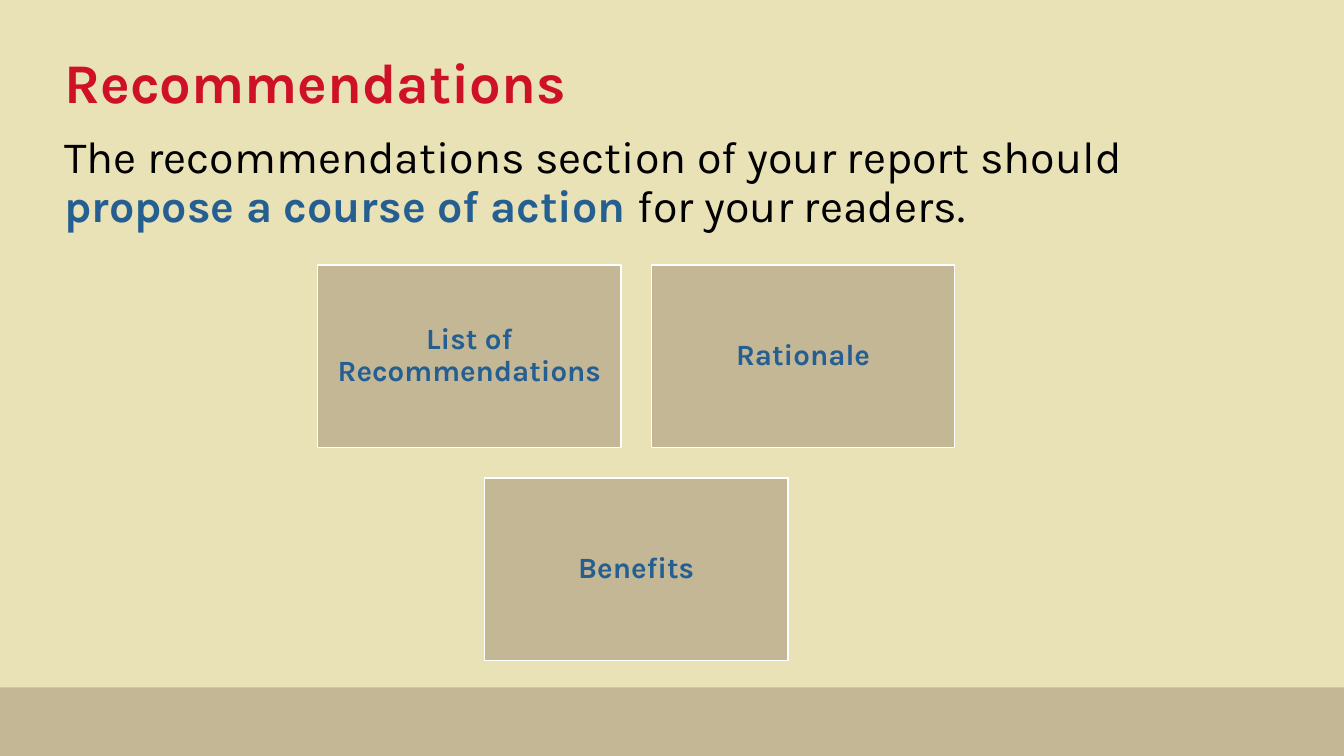
from pptx import Presentation
from pptx.dml.color import RGBColor
from pptx.enum.shapes import MSO_SHAPE
from pptx.enum.text import MSO_ANCHOR, PP_ALIGN
from pptx.util import Inches, Pt

COLORS = {"cream": "EAE2B7", "tan": "C4B796", "red": "CE1126",
          "blue": "255F91", "black": "000000", "white": "FFFFFF"}


class Deck:
    """Style, current slide and the grid that holds the cards."""
    font = "Karla"
    left, top = 3.15, 2.63
    card_w, card_h, gap = 3.01, 1.81, 0.3

    def __init__(self, prs):
        self.s = prs.slides.add_slide(prs.slide_layouts[6])
        fill = self.s.background.fill
        fill.solid()
        fill.fore_color.rgb = self.color("cream")

    def color(self, name):
        return RGBColor.from_string(COLORS[name])

    def style(self, r, size, color, bold):
        r.font.name, r.font.size, r.font.bold = self.font, Pt(size), bold
        r.font.color.rgb = self.color(color)

    def rect(self, x, y, w, h, line=None):
        sp = self.s.shapes.add_shape(
            MSO_SHAPE.RECTANGLE, Inches(x), Inches(y), Inches(w), Inches(h))
        sp.shadow.inherit = False
        sp.fill.solid()
        sp.fill.fore_color.rgb = self.color("tan")
        if line:
            sp.line.color.rgb = self.color(line)
            sp.line.width = Pt(1)
        else:
            sp.line.fill.background()
        return sp

    def text(self, x, y, w, h, runs, size, anchor=MSO_ANCHOR.TOP):
        tb = self.s.shapes.add_textbox(Inches(x), Inches(y), Inches(w), Inches(h))
        tf = tb.text_frame
        tf.word_wrap = True
        tf.vertical_anchor = anchor
        p = tf.paragraphs[0]
        p.line_spacing = 0.9
        for words, color, bold in runs:
            r = p.add_run()
            r.text = words
            self.style(r, size, color, bold)

    def card(self, col, row, label):
        """Place a card; fractional columns centre a card between two others."""
        x = self.left + col * (self.card_w + self.gap)
        y = self.top + row * (self.card_h + self.gap)
        tf = self.rect(x, y, self.card_w, self.card_h, "white").text_frame
        tf.word_wrap = True
        tf.vertical_anchor = MSO_ANCHOR.MIDDLE
        tf.margin_left = tf.margin_right = Inches(0.09)
        tf.margin_top = tf.margin_bottom = Inches(0.09)
        tf.text = label
        p = tf.paragraphs[0]
        p.alignment = PP_ALIGN.CENTER
        p.line_spacing = 0.9
        self.style(p.runs[0], 21, "blue", True)


def main():
    prs = Presentation()
    prs.slide_width, prs.slide_height = Inches(13.33), Inches(7.5)
    deck = Deck(prs)

    # Footer band
    deck.rect(0, 6.82, 13.33, 0.68)

    # Title and statement
    deck.text(0.54, 0.18, 12.28, 1.33, [("Recommendations", "red", True)],
              40, MSO_ANCHOR.MIDDLE)
    deck.text(0.54, 1.29, 12.28, 5.11, [
        ("The recommendations section of your report should ", "black", False),
        ("propose a course of action ", "blue", True),
        ("for your readers.", "black", False)], 32)

    # Cards: two above, one centred below
    for col, row, label in [(0, 0, "List of Recommendations"),
                            (1, 0, "Rationale"), (0.5, 1, "Benefits")]:
        deck.card(col, row, label)

    prs.save("out.pptx")


if __name__ == "__main__":
    main()
